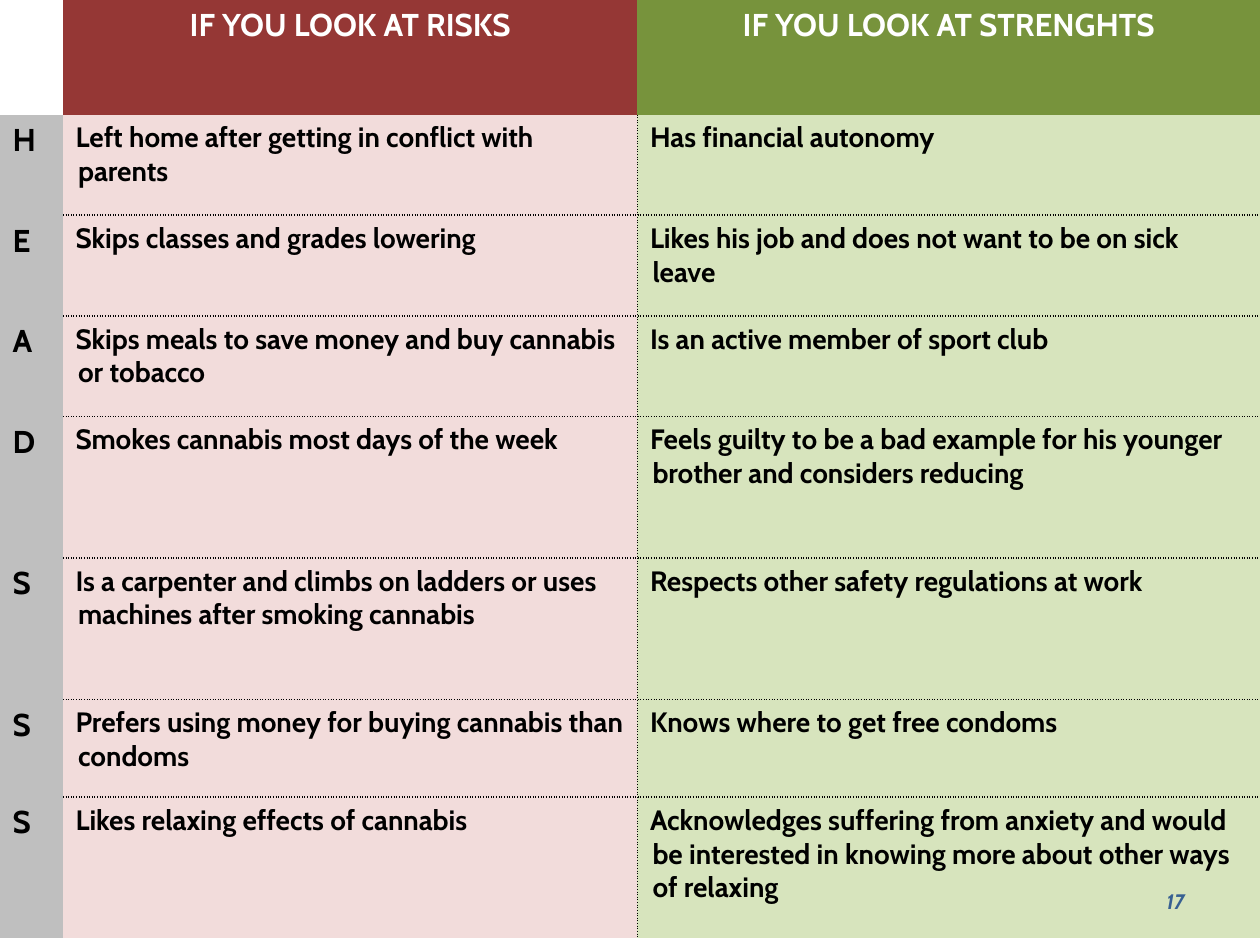
from lxml.etree import SubElement
from pptx import Presentation
from pptx.dml.color import RGBColor
from pptx.enum.text import MSO_ANCHOR, PP_ALIGN
from pptx.oxml.ns import qn
from pptx.util import Cm, Pt

COLORS = {
    "white": "FFFFFF", "black": "000000", "letter": "BFBFBF",
    "risk_head": "953735", "strength_head": "77933C",
    "risk": "F2DCDB", "strength": "D7E4BD", "number": "376092",
}
NO_STYLE = "{2D5ABB26-0587-4C30-8999-92F81FD0307C}"
COL_WIDTHS = [1.27, 11.58, 12.55]
ROW_HEIGHTS = [2.31, 2.03, 2.03, 2.03, 2.85, 2.85, 1.97, 2.85]
ROWS = [
    ("", "IF YOU LOOK AT RISKS", "IF YOU LOOK AT STRENGHTS"),
    ("H", "Left home after getting in conflict with parents", "Has financial autonomy"),
    ("E", "Skips classes and grades lowering",
     "Likes his job and does not want to be on sick leave"),
    ("A", "Skips meals to save money and buy cannabis or tobacco",
     "Is an active member of sport club"),
    ("D", "Smokes cannabis most days of the week",
     "Feels guilty to be a bad example for his younger brother and considers reducing"),
    ("S", "Is a carpenter and climbs on ladders or uses machines after smoking cannabis",
     "Respects other safety regulations at work"),
    ("S", "Prefers using money for buying cannabis than condoms",
     "Knows where to get free condoms"),
    ("S", "Likes relaxing effects of cannabis",
     "Acknowledges suffering from anxiety and would be interested in knowing more "
     "about other ways of relaxing"),
]


def write(p, text, size, color, **extra):
    r = p.add_run()
    r.text = text
    fmt = {"name": "Cabin", "size": Pt(size), "bold": True, **extra}
    for key, value in fmt.items():
        setattr(r.font, key, value)
    r.font.color.rgb = RGBColor.from_string(COLORS[color])


def dotted_borders(cell, sides):
    tcPr = cell._tc.get_or_add_tcPr()
    for side in sides:
        ln = SubElement(tcPr, qn(f"a:ln{side}"), w=str(Pt(1)))
        fill = SubElement(ln, qn("a:solidFill"))
        SubElement(fill, qn("a:srgbClr"), val=COLORS["black"])
        SubElement(ln, qn("a:prstDash"), val="sysDot")


prs = Presentation()
prs.slide_width, prs.slide_height = Cm(25.4), Cm(19.05)
s = prs.slides.add_slide(prs.slide_layouts[6])

# Table grid
table = s.shapes.add_table(len(ROWS), len(COL_WIDTHS), 0, 0,
                           Cm(sum(COL_WIDTHS)), Cm(sum(ROW_HEIGHTS))).table
table.first_row = table.horz_banding = False
table._tbl.tblPr.find(qn("a:tableStyleId")).text = NO_STYLE
for column, width in zip(table.columns, COL_WIDTHS):
    column.width = Cm(width)
for row, height in zip(table.rows, ROW_HEIGHTS):
    row.height = Cm(height)

# Cells: header row, letter column, risks and strengths
last = len(ROWS) - 1
for i, texts in enumerate(ROWS):
    fills = (["", "risk_head", "strength_head"] if i == 0
             else ["letter", "risk", "strength"])
    for j, (text, fill) in enumerate(zip(texts, fills)):
        cell = table.cell(i, j)
        if i > 0 and j > 0:
            sides = "R" if j == 1 else "L"
            sides += ("T" if i > 1 else "") + ("B" if i < last else "")
            dotted_borders(cell, sides)
        if not fill:
            cell.fill.background()
            continue
        cell.fill.solid()
        cell.fill.fore_color.rgb = RGBColor.from_string(COLORS[fill])
        p = cell.text_frame.paragraphs[0]
        p.alignment = PP_ALIGN.CENTER if i == 0 else PP_ALIGN.LEFT
        # Hanging indent for wrapped lines
        pPr = p._p.get_or_add_pPr()
        pPr.set("marL", str(Cm(0.05)))
        pPr.set("indent", str(-Cm(0.05)))
        write(p, text, 18 if i == 0 or j == 0 else 16, "white" if i == 0 else "black")

# Slide number
tf = s.shapes.add_textbox(Cm(18.2), Cm(17.65), Cm(5.93), Cm(1.02)).text_frame
tf.word_wrap = True
tf.vertical_anchor = MSO_ANCHOR.MIDDLE
p = tf.paragraphs[0]
p.alignment = PP_ALIGN.RIGHT
write(p, "17", 12, "number", italic=True)

prs.save("out.pptx")
